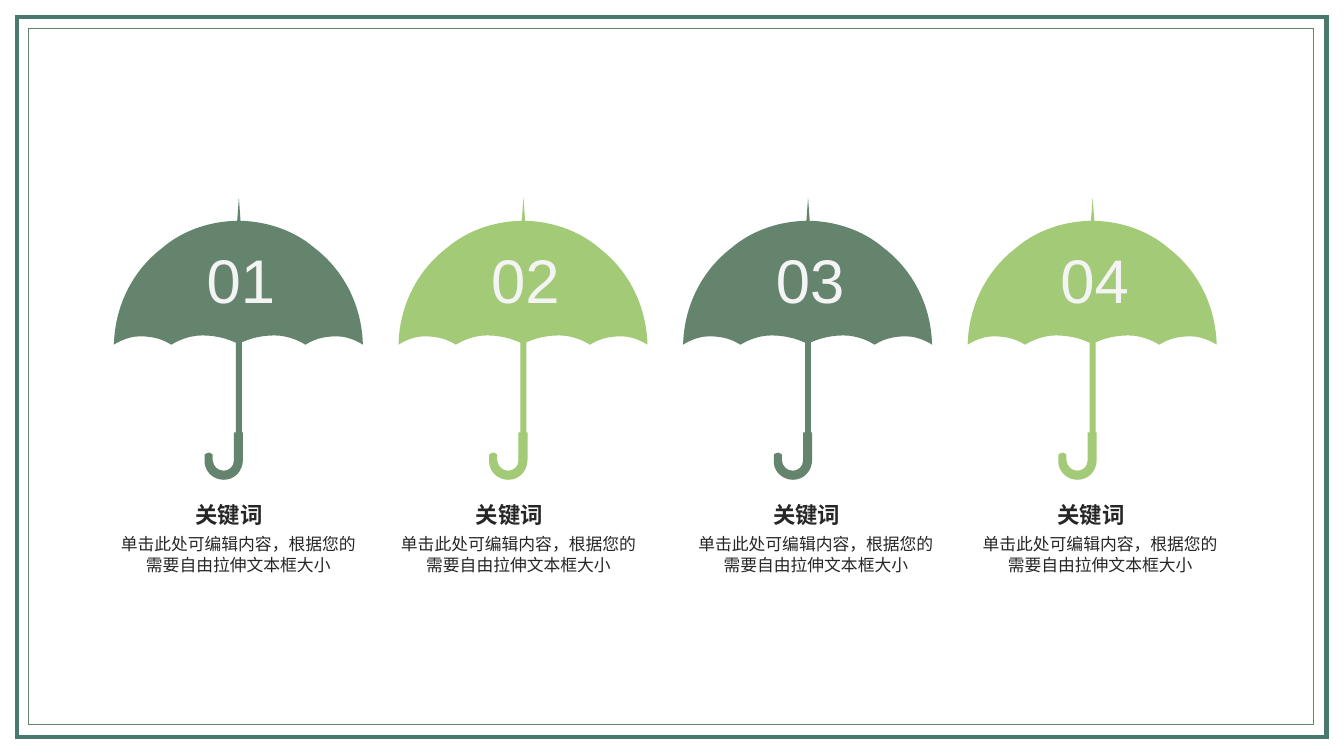
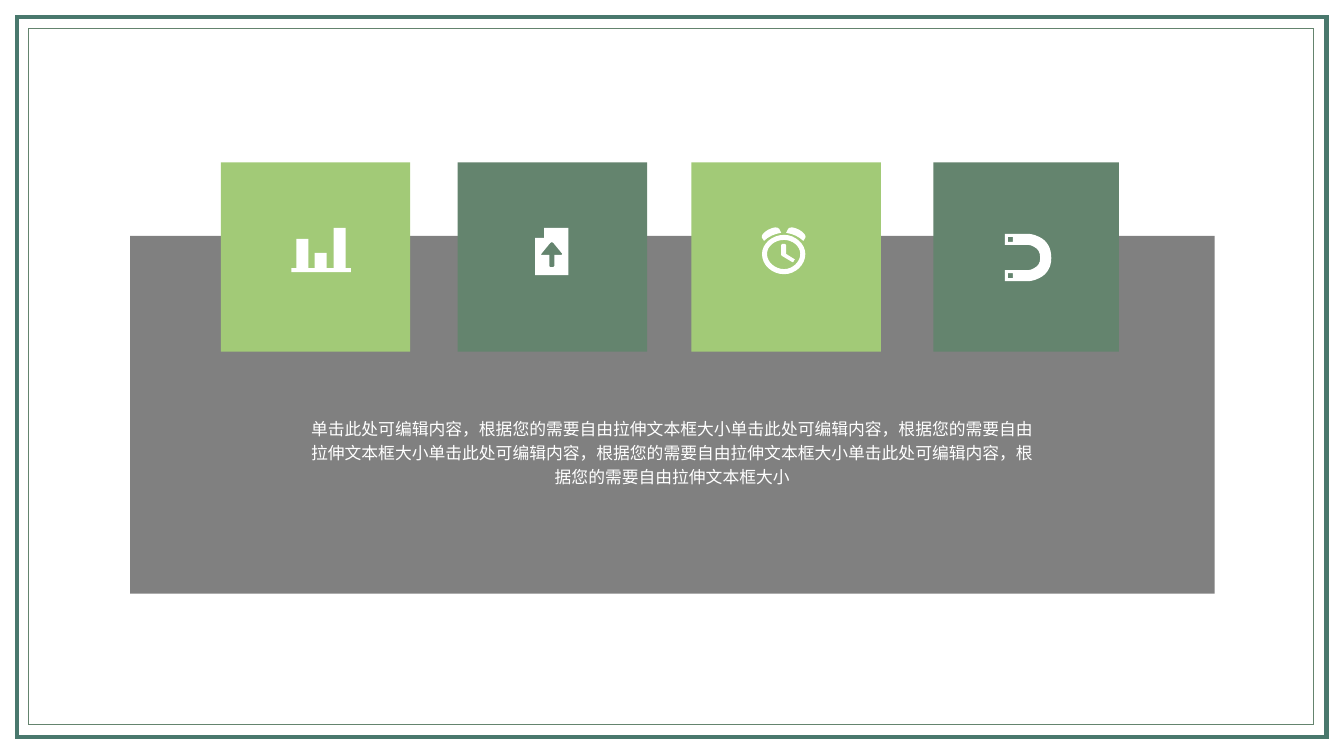
"""Build two framed slides: four umbrellas and a panel of icon tiles."""
from lxml import etree
from pptx import Presentation
from pptx.dml.color import RGBColor
from pptx.enum.shapes import MSO_SHAPE
from pptx.enum.text import MSO_AUTO_SIZE, PP_ALIGN
from pptx.oxml.ns import qn
from pptx.util import Inches, Pt

RECT = MSO_SHAPE.RECTANGLE
GROW = MSO_AUTO_SIZE.SHAPE_TO_FIT_TEXT
LEFT, MID = PP_ALIGN.LEFT, PP_ALIGN.CENTER

HUES = {"edge": "49786D", "dark": "64846E", "light": "A2CA77",
        "panel": "808080", "ink": "262626", "pale": "F4F4F4", "white": "FFFFFF"}

STYLES = {
    "number": {"hue": "pale", "inset": None,
               "font": {"name": "Arial", "size": Pt(44)},
               "para": {"alignment": MID}},
    "key": {"hue": "ink", "inset": 0,
            "font": {"name": "Arial", "size": Pt(16), "bold": True},
            "para": {"alignment": LEFT}},
    "note": {"hue": "ink", "inset": 0,
             "font": {"name": "Arial", "size": Pt(12)},
             "para": {"alignment": MID}},
    "body": {"hue": "white", "inset": 0,
             "font": {"name": "Calibri", "size": Pt(12)},
             "para": {"alignment": MID, "line_spacing": 1.2}},
}

KEY = "关键词"
NOTE = "单击此处可编辑内容，根据您的需要自由拉伸文本框大小"

CANOPY = [(0, 1.46), (.06, 1.42, .14, 1.39, .21, 1.38),
          (.34, 1.37, .46, 1.39, .57, 1.46), (.65, 1.41, .74, 1.38, .83, 1.37),
          (.97, 1.36, 1.12, 1.39, 1.25, 1.46), (1.25, .23),
          (.97, .23, .69, .32, .48, .5), (.18, .73, .01, 1.08, 0, 1.46)]
SPIKE = [(1.22, .28), (1.24, 0), (1.26, .28)]
HOOK = [(1.19, 2.33), (1.28, 2.33), (1.28, 2.6),
        (1.28, 2.71, 1.2, 2.8, 1.09, 2.8), (.98, 2.8, .89, 2.71, .9, 2.6),
        (.9, 2.55), (.91, 2.54, .93, 2.53, .95, 2.53),
        (.96, 2.54, .97, 2.54, .98, 2.55), (.98, 2.61),
        (.99, 2.67, 1.03, 2.71, 1.09, 2.71),
        (1.14, 2.71, 1.19, 2.67, 1.19, 2.61)]

BARS = [(1.24, 1.05), (1.24, .65), (1.12, .65), (1.12, 1.05), (1.05, 1.05),
        (1.05, .9), (.93, .9), (.93, 1.05), (.87, 1.05), (.87, .76),
        (.75, .76), (.75, 1.05), (.7, 1.05), (.7, 1.09), (1.29, 1.09),
        (1.29, 1.05)]
PAGE = [(.86, .65), (.86, .75), (.77, .75), (.77, 1.12), (1.1, 1.12), (1.1, .65)]
ARROW = [(1.03, .92), (.98, .92), (.98, .92, .97, .92, .96, .92), (.96, 1.03),
         (.96, 1.04, .96, 1.04, .95, 1.04), (.92, 1.04),
         (.91, 1.04, .91, 1.04, .91, 1.03), (.91, .92), (.84, .92),
         (.83, .92, .82, .92, .83, .91), (.92, .8),
         (.93, .79, .94, .79, .95, .8), (1.04, .91),
         (1.04, .92, 1.04, .92, 1.03, .92)]
HANDS = [(1.01, .99), (1, .99), (.9, .93), (.89, .93, .89, .92, .89, .92),
         (.89, .82), (.89, .81, .89, .81, .9, .81), (.93, .81),
         (.94, .81, .94, .81, .94, .82), (.94, .91), (1.02, .96),
         (1.03, .96, 1.03, .97, 1.02, .97)]
BELL = [(.89, .7), (.87, .66), (.85, .64, .82, .64, .76, .67),
        (.71, .7, .69, .73, .7, .75), (.72, .78), (.76, .74, .82, .71, .89, .7)]
RIM = [(.92, .72), (.8, .72, .7, .81, .7, .91), (.7, 1.02, .8, 1.11, .92, 1.11),
       (1.03, 1.11, 1.13, 1.02, 1.13, .91), (1.13, .81, 1.03, .72, .92, .72)]
DIAL = [(.92, 1.06), (.83, 1.06, .75, .99, .75, .91), (.75, .83, .83, .77, .92, .77),
        (1, .77, 1.08, .83, 1.08, .91), (1.08, .99, 1, 1.06, .92, 1.06)]
MAGNET = [(1.05, .74), (.99, .71, .94, .71, .94, .71), (.71, .71), (.71, .82),
          (.94, .82), (.94, .82, .97, .82, 1, .84),
          (1.04, .86, 1.06, .89, 1.06, .95), (1.06, 1, 1.04, 1.03, 1, 1.05),
          (.97, 1.07, .94, 1.07, .94, 1.07), (.71, 1.07), (.71, 1.18),
          (.94, 1.18), (.94, 1.18, .99, 1.18, 1.05, 1.15),
          (1.13, 1.11, 1.17, 1.04, 1.17, .95), (1.17, .85, 1.13, .78, 1.05, .74)]
POLES = [[(.79, y + .05), (.74, y + .05), (.74, y), (.79, y)] for y in (.74, 1.1)]


def tint(hue):
    """Return the named colour."""
    return RGBColor.from_string(HUES[hue])


def paint(shape, hue):
    """Fill a shape flatly, with no line or shadow."""
    shape.shadow.inherit = False
    shape.fill.solid()
    shape.fill.fore_color.rgb = tint(hue)
    shape.line.fill.background()


def block(host, box, hue):
    """Add a filled rectangle."""
    shape = host.shapes.add_shape(RECT, *map(Inches, box))
    paint(shape, hue)
    return shape


def flip(path, width):
    """Mirror a path within a width."""
    return [tuple(v if i % 2 else width - v for i, v in enumerate(step))
            for step in path]


def bend(shape, paths):
    """Turn each run of three control points into a cubic curve."""
    nodes = iter(shape.element.findall(".//" + qn("a:lnTo")))
    for step in (step for path in paths for step in path[1:]):
        node = next(nodes)
        if len(step) == 6:
            node.tag = qn("a:cubicBezTo")
            for extra in (next(nodes), next(nodes)):
                node.append(extra[0])
                extra.getparent().remove(extra)


def draw(host, paths, left, top, hue):
    """Add one freeform made of closed contours."""
    loops = [[(Inches(left + step[i]), Inches(top + step[i + 1]))
              for step in path for i in range(0, len(step), 2)] for path in paths]
    pen = host.shapes.build_freeform(*loops[0][0], scale=1.0)
    for n, loop in enumerate(loops):
        if n:
            pen.move_to(*loop[0])
        pen.add_line_segments(loop[1:], close=True)
    shape = pen.convert_to_shape()
    bend(shape, paths)
    paint(shape, hue)


def write(slide, box, text, style):
    """Add a styled text box."""
    look = STYLES[style]
    frame = slide.shapes.add_textbox(*map(Inches, box)).text_frame
    frame.word_wrap = True
    frame.auto_size = GROW
    if look["inset"] is not None:
        for side in ("left", "top", "right", "bottom"):
            setattr(frame, f"margin_{side}", Inches(look["inset"]))
    para = frame.paragraphs[0]
    run = para.add_run()
    run.text = text
    for part, name in ((para, "para"), (run.font, "font")):
        for key, value in look[name].items():
            setattr(part, key, value)
    run.font.color.rgb = tint(look["hue"])


def start(deck):
    """Add a blank slide with the double frame."""
    slide = deck.slides.add_slide(deck.slide_layouts[6])
    for box, hue, width in (((.17, .17, 12.99, 7.14), "edge", 3),
                            ((.28, .28, 12.75, 6.91), "dark", .5)):
        shape = block(slide, box, "white")
        shape.fill.background()
        shape.line.color.rgb = tint(hue)
        shape.line.width = Pt(width)
        edge = shape.element.find(".//" + qn("a:ln"))
        etree.SubElement(edge, qn("a:miter"), lim="800000")
    return slide


def brolly(slide, left, top, hue, text):
    """Draw a numbered umbrella."""
    group = slide.shapes.add_group_shape()
    for path in (CANOPY, flip(CANOPY, 2.47)):
        draw(group, [path], left, top, hue)
    block(group, (left + 1.21, top + 1.33, .06, 1.02), hue)
    for path in (SPIKE, HOOK):
        draw(group, [path], left, top, hue)
    write(slide, (left + .61, top + .39, 1.3, .84), text, "number")


def label(slide, left, top):
    """Write a keyword with its note."""
    write(slide, (left + .81, top, .88, .27), KEY, "key")
    write(slide, (left, top + .33, 2.47, .4), NOTE, "note")


def clock(slide, left, top):
    """Draw an alarm clock."""
    group = slide.shapes.add_group_shape()
    for paths in ([HANDS], [BELL], [flip(BELL, 1.83)], [RIM, DIAL]):
        draw(group, paths, left, top, "white")


def rain(deck):
    """Build the slide of four umbrellas."""
    slide = start(deck)
    for n in range(4):
        brolly(slide, 1.13 + n * 8.47 / 3, 1.96, ("dark", "light")[n % 2], f"{n + 1:02}")
    for left in (1.13, 3.91, 6.86, 9.68):
        label(slide, left, 4.97)


def board(deck):
    """Build the slide of icon tiles over a panel."""
    slide = start(deck)
    block(slide, (1.29, 2.34, 10.76, 3.55), "panel")
    tiles = ((2.19, 1.88, "light", [BARS]), (4.54, 1.88, "dark", [PAGE, ARROW]),
             (6.86, 1.88, "light", None), (9.26, 1.84, "dark", [MAGNET, *POLES]))
    for left, width, hue, icon in tiles:
        block(slide, (left, 1.61, width, 1.88), hue)
        if icon:
            draw(slide, icon, left, 1.61, "white")
        else:
            clock(slide, left, 1.61)
    write(slide, (3.01, 4.11, 7.32, .73), NOTE * 4, "body")


def main():
    """Build and save the deck."""
    deck = Presentation()
    deck.slide_width, deck.slide_height = Inches(40 / 3), Inches(7.5)
    rain(deck)
    board(deck)
    deck.save("out.pptx")


if __name__ == "__main__":
    main()
